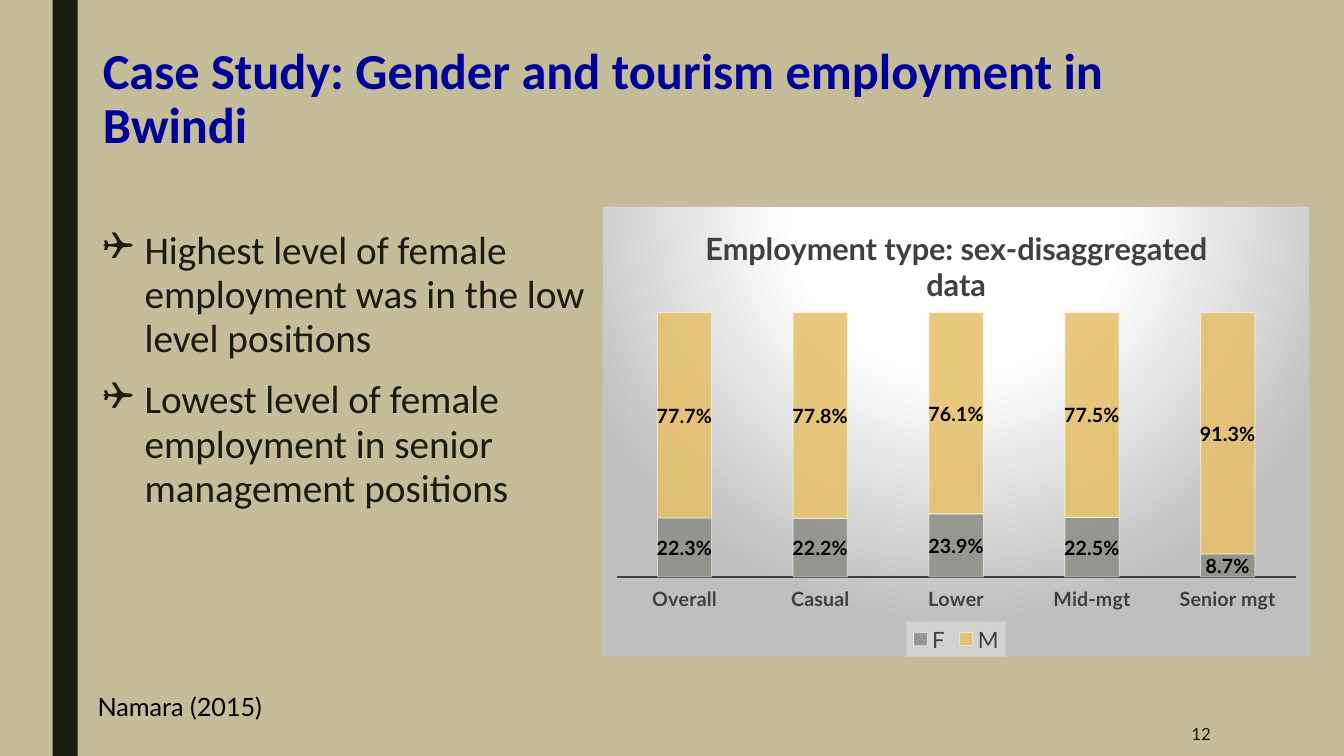
from dataclasses import dataclass

from lxml.etree import SubElement
from pptx import Presentation
from pptx.chart.data import CategoryChartData
from pptx.dml.color import RGBColor
from pptx.enum.chart import XL_CHART_TYPE, XL_LABEL_POSITION, XL_LEGEND_POSITION, XL_TICK_LABEL_POSITION, XL_TICK_MARK
from pptx.enum.shapes import MSO_SHAPE
from pptx.enum.text import MSO_ANCHOR, PP_ALIGN
from pptx.oxml import parse_xml
from pptx.oxml.ns import nsdecls, qn
from pptx.util import Pt


@dataclass(frozen=True)
class Theme:
    heading_font: str = "Calibri"
    font: str = "Lato"
    background: str = "C5BD99"
    dark: str = "191B0E"
    title: str = "000099"
    black: str = "000000"
    white: str = "FFFFFF"
    chart_text: str = "404040"
    chart_edge: str = "BFBFBF"
    legend_fill: str = "F2F2F2"
    female: str = "8C8D86"
    male: str = "E6C069"
    title_size: int = 36
    body_size: int = 28
    chart_title_size: int = 22
    source_size: int = 18
    legend_size: int = 16
    label_size: int = 14
    number_size: int = 12


def color_xml(color, alpha=100):
    return f'<a:srgbClr val="{color}"><a:alpha val="{alpha * 1000}"/></a:srgbClr>'


def solid_xml(color, alpha):
    return f"<a:solidFill>{color_xml(color, alpha)}</a:solidFill>"


def shape_properties(fill, line=""):
    return parse_xml(f'<c:spPr {nsdecls("c", "a")}>{fill}{line}</c:spPr>')


def line_xml(color, alpha=100):
    return f'<a:ln w="{Pt(0.75)}">{solid_xml(color, alpha)}</a:ln>'


class SlideBuilder:
    def __init__(self, deck, theme):
        self.theme = theme
        self.page = deck.slides.add_slide(deck.slide_layouts[5])
        fill = self.page.background.fill
        fill.solid()
        fill.fore_color.rgb = RGBColor.from_string(theme.background)

    def style(self, font, size, color, name=None, bold=False):
        font.name = name or self.theme.font
        font.size = Pt(size)
        font.bold = bold
        font.color.rgb = RGBColor.from_string(color)

    def bar(self, *frame):
        shape = self.page.shapes.add_shape(MSO_SHAPE.RECTANGLE, *map(Pt, frame))
        shape.shadow.inherit = False
        shape.fill.solid()
        shape.fill.fore_color.rgb = RGBColor.from_string(self.theme.dark)
        shape.line.fill.background()

    def title(self, text, *frame):
        box = self.page.shapes.title
        box.left, box.top, box.width, box.height = map(Pt, frame)
        box.text_frame.word_wrap = True
        box.text_frame.vertical_anchor = MSO_ANCHOR.TOP
        para = box.text_frame.paragraphs[0]
        para.alignment = PP_ALIGN.LEFT
        para.line_spacing = 0.89
        span = para.add_run()
        span.text = text
        self.style(span.font, self.theme.title_size, self.theme.title, self.theme.heading_font, True)

    def text(self, lines, frame, size, color, font=None, align=PP_ALIGN.LEFT,
             anchor=MSO_ANCHOR.TOP, bullet=None):
        box = self.page.shapes.add_textbox(*map(Pt, frame))
        box.text_frame.word_wrap = True
        box.text_frame.vertical_anchor = anchor
        for index, line in enumerate(lines):
            para = box.text_frame.add_paragraph() if index else box.text_frame.paragraphs[0]
            para.alignment = align
            if bullet:
                self.bullet(para, bullet)
            span = para.add_run()
            span.text = line
            self.style(span.font, size, color, font)

    def bullet(self, para, symbol):
        para.line_spacing = 0.94
        para.space_before = Pt(10)
        para.space_after = Pt(2)
        properties = para._p.get_or_add_pPr()
        properties.set("marL", str(Pt(30)))
        properties.set("indent", str(-Pt(30)))
        SubElement(properties, qn("a:buFont"), typeface="Wingdings")
        SubElement(properties, qn("a:buChar"), char=symbol)

    def stacked_chart(self, title, categories, series, frame):
        """Add a 100% stacked chart; series maps a name to (values, color)."""
        theme = self.theme
        data = CategoryChartData(number_format="0.0%")
        data.categories = categories
        for name, (values, _) in series.items():
            data.add_series(name, values)
        chart = self.page.shapes.add_chart(
            XL_CHART_TYPE.COLUMN_STACKED_100, *map(Pt, frame), data).chart
        self.style(chart.font, 10, theme.black)

        chart.has_title = True
        span = chart.chart_title.text_frame.paragraphs[0].add_run()
        span.text = title
        self.style(span.font, theme.chart_title_size, theme.chart_text, bold=True)
        chart.chart_title.include_in_layout = False

        axis = chart.category_axis
        axis.major_tick_mark = XL_TICK_MARK.NONE
        axis.tick_label_position = XL_TICK_LABEL_POSITION.LOW
        axis.format.line.color.rgb = RGBColor.from_string(theme.chart_text)
        axis.format.line.width = Pt(1.5)
        self.style(axis.tick_labels.font, theme.label_size, theme.chart_text, bold=True)
        chart.value_axis.visible = False
        chart.value_axis.has_major_gridlines = False

        plot = chart.plots[0]
        plot.gap_width = 150
        plot.overlap = 100
        plot.vary_by_categories = False
        for item, (_, color) in zip(plot.series, series.values()):
            item.format.fill.solid()
            old = item._element.find(qn("c:spPr"))
            item._element.replace(old, shape_properties(
                solid_xml(color, 85), line_xml(theme.white, 50)))
            labels = item.data_labels
            labels.show_value = True
            labels.position = XL_LABEL_POSITION.CENTER
            labels.number_format = "0.0%"
            labels.number_format_is_linked = False
            self.style(labels.font, theme.label_size, theme.black, bold=True)

        chart.has_legend = True
        chart.legend.position = XL_LEGEND_POSITION.BOTTOM
        chart.legend.include_in_layout = False
        self.style(chart.legend.font, theme.legend_size, theme.chart_text)
        chart.legend._element.find(qn("c:txPr")).addprevious(
            shape_properties(solid_xml(theme.legend_fill, 39)))
        self.chart_area(chart)
        self.plot_layout(chart, x=0.02, y=0.236, w=0.96, h=0.587)

    def chart_area(self, chart):
        stops = ((0, self.theme.white), (39, self.theme.white), (100, self.theme.chart_edge))
        stop_xml = "".join(f'<a:gs pos="{at * 1000}">{color_xml(color)}</a:gs>' for at, color in stops)
        gradient = (f'<a:gradFill><a:gsLst>{stop_xml}</a:gsLst><a:path path="circle">'
                    '<a:fillToRect l="50000" t="-80000" r="50000" b="180000"/></a:path></a:gradFill>')
        chart._chartSpace.find(qn("c:chart")).addnext(
            shape_properties(gradient, line_xml(self.theme.chart_edge)))

    def plot_layout(self, chart, **fractions):
        area = chart._chartSpace.find(".//" + qn("c:plotArea"))
        for old in area.findall(qn("c:layout")):
            area.remove(old)
        values = "".join(f'<c:{key} val="{value}"/>' for key, value in fractions.items())
        area.insert(0, parse_xml(
            f'<c:layout {nsdecls("c")}><c:manualLayout><c:layoutTarget val="inner"/>'
            f'<c:xMode val="edge"/><c:yMode val="edge"/>{values}</c:manualLayout></c:layout>'))


def main():
    deck = Presentation()
    deck.slide_width, deck.slide_height = Pt(960), Pt(540)
    theme = Theme()
    slide = SlideBuilder(deck, theme)
    slide.bar(37.5, 0, 18, 540)
    slide.title("Case Study: Gender and tourism employment in Bwindi", 66.24, 29.5, 805, 116.6)
    slide.stacked_chart(
        "Employment type: sex-disaggregated data",
        ("Overall", "Casual", "Lower", "Mid-mgt", "Senior mgt"),
        {"F": ((0.223, 0.222, 0.239, 0.225, 0.087), theme.female),
         "M": ((0.777, 0.778, 0.761, 0.775, 0.913), theme.male)},
        (430, 147, 506, 322.5))
    slide.text(("Highest level of female employment was in the low level positions",
                "Lowest level of female employment in senior management positions"),
               (66.24, 160, 376.5, 316), theme.body_size, theme.dark, theme.heading_font, bullet="❑")
    slide.text(("Namara (2015)",), (62.6, 490.3, 785.5, 29), theme.source_size, theme.black)
    slide.text(("12",), (746, 508.3, 126, 31.7), theme.number_size, theme.dark,
               align=PP_ALIGN.RIGHT, anchor=MSO_ANCHOR.MIDDLE)
    deck.save("out.pptx")


if __name__ == "__main__":
    main()
